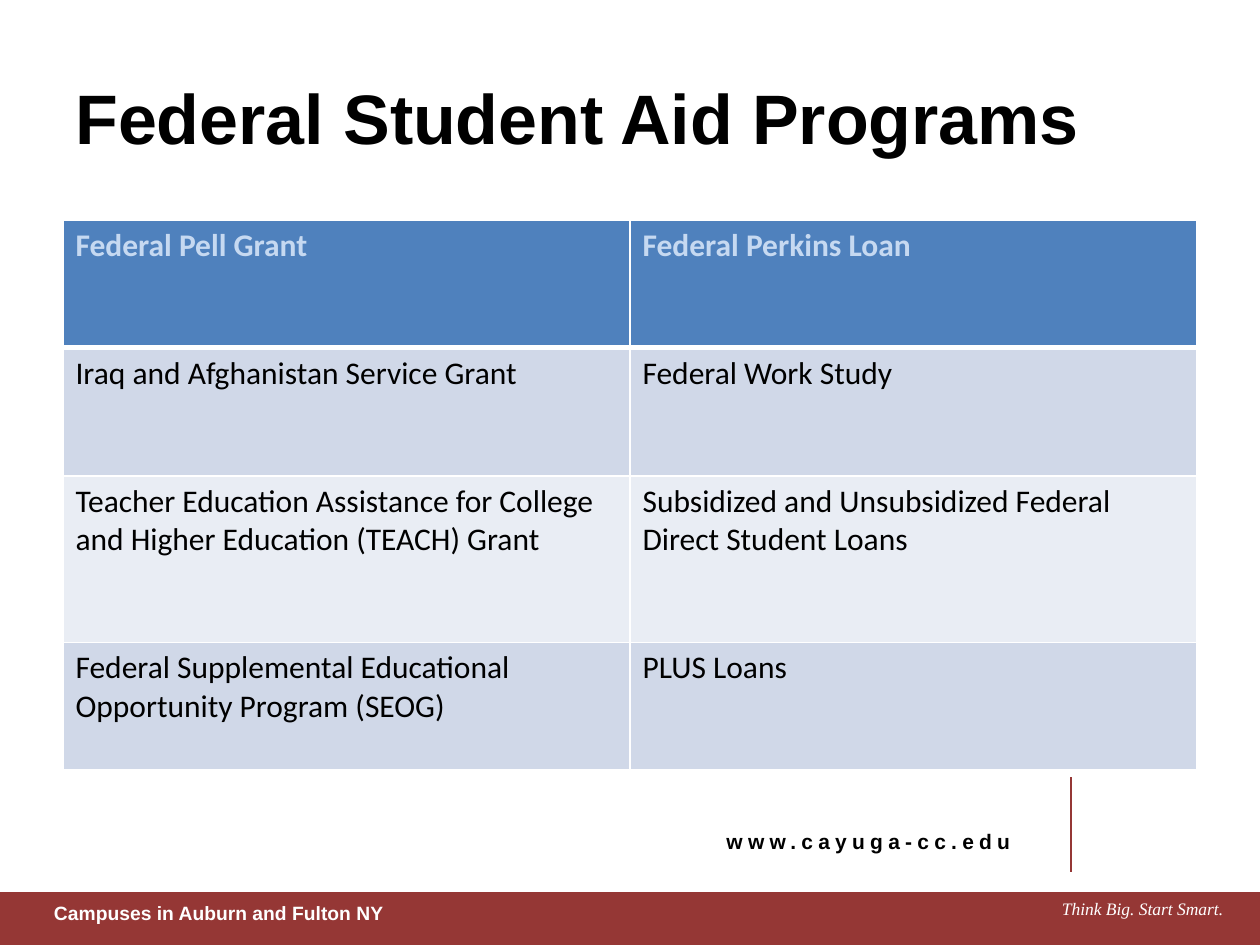
from lxml.etree import SubElement
from pptx import Presentation
from pptx.dml.color import RGBColor
from pptx.enum.shapes import MSO_CONNECTOR, MSO_SHAPE
from pptx.enum.text import MSO_ANCHOR, PP_ALIGN
from pptx.oxml.ns import qn
from pptx.util import Inches, Pt

BLACK = RGBColor(0x00, 0x00, 0x00)
WHITE = RGBColor(0xFF, 0xFF, 0xFF)
MAROON = RGBColor(0x95, 0x37, 0x35)
BLUE = RGBColor(0x4F, 0x81, 0xBD)
PALE = RGBColor(0xC6, 0xD9, 0xF1)
BAND = RGBColor(0xD0, 0xD8, 0xE8)
LIGHT = RGBColor(0xE9, 0xED, 0xF4)

HEIGHTS = (1.01, 1.02, 1.32, 1.01)
AID = (
    ("Federal Pell Grant", "Federal Perkins Loan"),
    ("Iraq and Afghanistan Service Grant", "Federal Work Study"),
    ("Teacher Education Assistance for College and Higher Education (TEACH) Grant",
     "Subsidized and Unsubsidized Federal Direct Student Loans"),
    ("Federal Supplemental Educational Opportunity Program (SEOG)", "PLUS Loans"),
)


def write(frame, text, size=18, face="Arial", color=BLACK, bold=False,
          italic=False, align=PP_ALIGN.LEFT, leading=None, spread=0):
    para = frame.paragraphs[0]
    para.alignment = align
    if leading:
        para.line_spacing = leading
    run = para.add_run()
    run.text = text
    font = run.font
    font.name, font.size = face, Pt(size)
    font.bold, font.italic = bold, italic
    font.color.rgb = color
    if spread:
        font._element.set("spc", str(spread * 100))


def add_text(slide, box, text, wrap=True, anchor=MSO_ANCHOR.TOP, right=0.1, **style):
    frame = slide.shapes.add_textbox(*map(Inches, box)).text_frame
    frame.word_wrap = wrap
    frame.vertical_anchor = anchor
    frame.margin_right = Inches(right)
    write(frame, text, **style)


def add_bar(slide, box, color):
    bar = slide.shapes.add_shape(MSO_SHAPE.RECTANGLE, *map(Inches, box))
    bar.shadow.inherit = False
    bar.fill.solid()
    bar.fill.fore_color.rgb = color
    bar.line.fill.background()


def add_rule(slide, ends, color):
    rule = slide.shapes.add_connector(MSO_CONNECTOR.STRAIGHT, *map(Inches, ends))
    rule.line.color.rgb = color
    rule.line.width = Pt(1)
    SubElement(rule._element.spPr, qn("a:effectLst"))


def set_edge(cell, side, width):
    edge = SubElement(cell._tc.get_or_add_tcPr(), qn(f"a:ln{side}"), w=str(Pt(width)))
    fill = SubElement(edge, qn("a:solidFill"))
    SubElement(fill, qn("a:srgbClr"), val=str(WHITE))


def fill_cell(cell, text, row):
    head = row == 0
    widths = {"L": 1, "R": 1, "T": 3 if row == 1 else 1, "B": 3 if head else 1}
    for side, width in widths.items():
        set_edge(cell, side, width)
    cell.fill.solid()
    cell.fill.fore_color.rgb = BLUE if head else (LIGHT, BAND)[row % 2]
    write(cell.text_frame, text, face="Calibri", color=PALE if head else BLACK, bold=head)


def add_grid(slide, box, rows):
    grid = slide.shapes.add_table(len(rows), len(rows[0]), *map(Inches, box)).table
    for row, texts in enumerate(rows):
        grid.rows[row].height = Inches(HEIGHTS[row])
        for col, text in enumerate(texts):
            fill_cell(grid.cell(row, col), text, row)


def main():
    """Build the student aid slide and save it."""
    deck = Presentation()
    deck.slide_width, deck.slide_height = Inches(10), Inches(7.5)
    slide = deck.slides.add_slide(deck.slide_layouts[6])
    add_text(slide, (5.5, 6.43, 2.75, 0.68), "www.cayuga-cc.edu", right=0.23, size=12,
             bold=True, align=PP_ALIGN.RIGHT, leading=1.5, spread=3)
    add_rule(slide, (8.5, 6.17, 8.5, 6.92), MAROON)
    add_bar(slide, (0, 7.08, 10, 0.42), MAROON)
    add_text(slide, (8.33, 7.08, 1.67, 0.27), "Think Big. Start Smart.", size=10,
             face="Times New Roman", color=WHITE, italic=True)
    add_text(slide, (0.33, 7.1, 2.89, 0.29), "Campuses in Auburn and Fulton NY",
             wrap=False, size=11, color=WHITE, bold=True)
    add_text(slide, (0.5, 0.3, 9, 1.25), "Federal Student Aid Programs",
             anchor=MSO_ANCHOR.MIDDLE, size=40, bold=True)
    add_grid(slide, (0.5, 1.75, 9, sum(HEIGHTS)), AID)
    deck.save("out.pptx")


if __name__ == "__main__":
    main()
